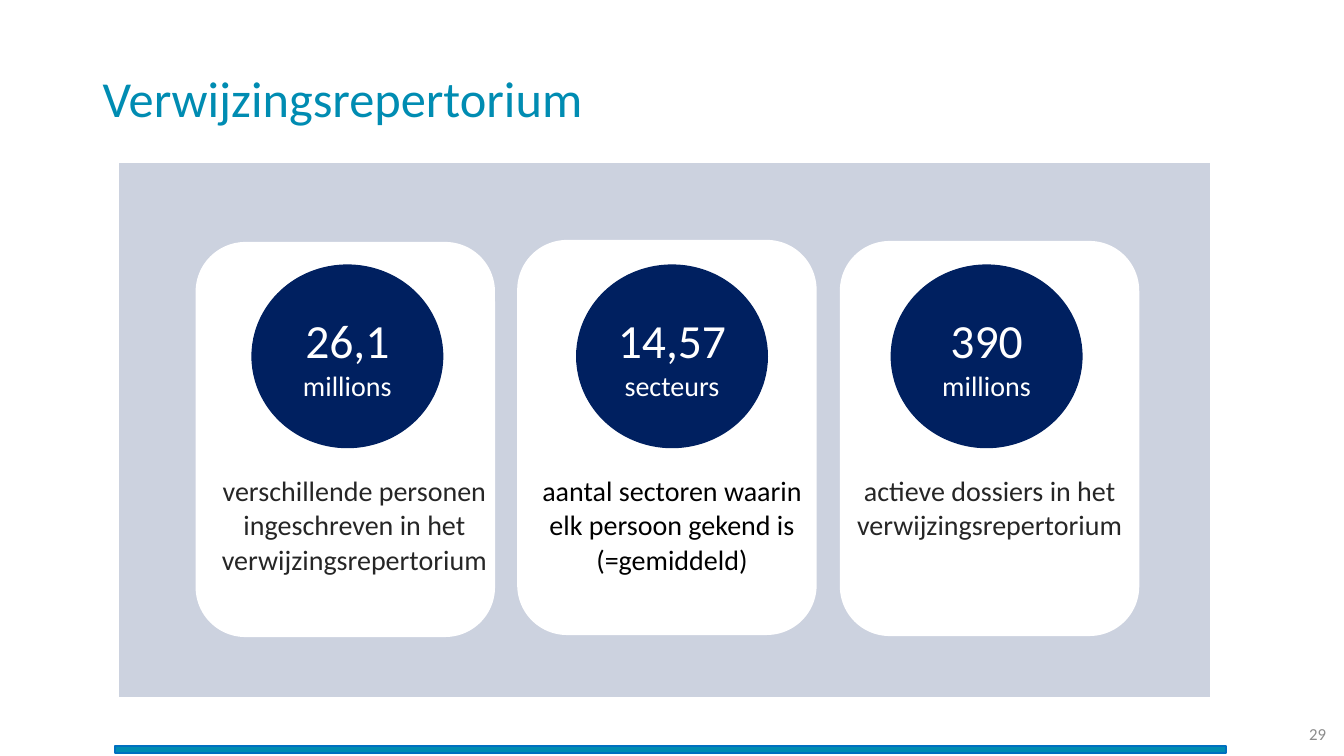
from lxml.etree import SubElement
from pptx import Presentation
from pptx.dml.color import RGBColor
from pptx.enum.shapes import MSO_SHAPE as Shape
from pptx.enum.text import MSO_ANCHOR as Anchor, PP_ALIGN as Align
from pptx.oxml.ns import qn
from pptx.util import Inches, Pt

COLORS = {
    "teal": "008CB2", "blue": "0070C0", "navy": "002060", "white": "FFFFFF",
    "dark": "262626", "black": "000000", "gray": "8C8C8C",
}
NO_GRID_STYLE = "{2D5ABB26-0587-4C30-8999-92F81FD0307C}"
FACTS = [
    {"figure": "26,1", "unit": "millions", "card": (1.94, 2.4), "circle": 2.5, "ink": "dark",
     "label": "verschillende personen ingeschreven in het verwijzingsrepertorium"},
    {"figure": "14,57", "unit": "secteurs", "card": (5.13, 2.38), "circle": 5.72, "ink": "black",
     "label": "aantal sectoren waarin elk persoon gekend is (=gemiddeld)"},
    {"figure": "390", "unit": "millions", "card": (8.33, 2.39), "circle": 8.84, "ink": "dark",
     "label": "actieve dossiers in het verwijzingsrepertorium"},
]


def color(name):
    """Return the named colour."""
    return RGBColor.from_string(COLORS[name])


def style_run(run, size, ink):
    """Set the font, size and colour of a run."""
    run.font.name = "Calibri"
    run.font.size = Pt(size)
    run.font.color.rgb = color(ink)


def add_block(slide, kind, box, fill, line=None):
    """Add a flat shape with an optional thin outline."""
    block = slide.shapes.add_shape(kind, *map(Inches, box))
    block.shadow.inherit = False
    block.fill.solid()
    block.fill.fore_color.rgb = color(fill)
    if line:
        block.line.color.rgb = color(line)
        block.line.width = Pt(1)
    else:
        block.line.fill.background()
    return block


def add_line_of_text(slide, box, text, size, ink, align):
    """Add a vertically centred text box."""
    frame = slide.shapes.add_textbox(*map(Inches, box)).text_frame
    frame.word_wrap = True
    frame.vertical_anchor = Anchor.MIDDLE
    frame.text = text
    paragraph = frame.paragraphs[0]
    paragraph.alignment = align
    paragraph.line_spacing = 0.9
    style_run(paragraph.runs[0], size, ink)


def add_panel(slide, box):
    """Add the translucent backdrop."""
    panel = add_block(slide, Shape.RECTANGLE, box, "navy", "white")
    for tint in panel.element.spPr.find(qn("a:solidFill")):
        SubElement(tint, qn("a:alpha"), val="20000")


def add_circle(slide, box, fact):
    """Add a circle holding a figure and its unit."""
    circle = add_block(slide, Shape.FLOWCHART_CONNECTOR, box, "navy", "navy")
    frame = circle.text_frame
    frame.word_wrap = True
    frame.vertical_anchor = Anchor.MIDDLE
    paragraph = frame.paragraphs[0]
    paragraph.alignment = Align.CENTER
    for text, size in ((fact["figure"], 34), (" ", 20), (fact["unit"], 20)):
        run = paragraph.add_run()
        run.text = text
        style_run(run, size, "white")


def add_labels(slide, box):
    """Add the one-row table of labels under the circles."""
    holder = slide.shapes.add_table(1, len(FACTS), *map(Inches, box))
    labels = holder.table
    labels.first_row = labels.horz_banding = False
    for style in holder.element.iter(qn("a:tableStyleId")):
        style.text = NO_GRID_STYLE
    for cell, fact in zip(labels.rows[0].cells, FACTS):
        cell.fill.background()
        cell.margin_top = Inches(0.35)
        cell.text = fact["label"]
        paragraph = cell.text_frame.paragraphs[0]
        paragraph.alignment = Align.CENTER
        style_run(paragraph.runs[0], 20, fact["ink"])


def add_facts(slide, box):
    """Add the panel with its cards, circles and labels."""
    left, top, _, _ = box
    add_panel(slide, box)
    for fact in FACTS:
        add_block(slide, Shape.ROUNDED_RECTANGLE, (*fact["card"], 2.97, 3.92), "white")
    for fact in FACTS:
        add_circle(slide, (fact["circle"], top + 1.02, 1.89, 1.81), fact)
    add_labels(slide, (left + 0.77, top + 2.75, 9.45, 2.83))


def add_footer(slide, box):
    """Add the bottom bar and the slide number."""
    left, top, width, _ = box
    add_block(slide, Shape.RECTANGLE, box, "teal", "blue")
    number = (left + width + 0.27, top - 0.31, 0.82, 0.4)
    add_line_of_text(slide, number, "29", 12, "gray", Align.RIGHT)


def main():
    """Build and save the slide."""
    deck = Presentation()
    deck.slide_width, deck.slide_height = Inches(13.33), Inches(7.5)
    slide = deck.slides.add_slide(deck.slide_layouts[6])
    add_footer(slide, (1.14, 7.4, 11.02, 0.07))
    add_line_of_text(slide, (0.92, 0.28, 11.5, 1.45), "Verwijzingsrepertorium", 36, "teal", Align.LEFT)
    add_facts(slide, (1.17, 1.61, 10.84, 5.31))
    deck.save("out.pptx")


if __name__ == "__main__":
    main()
